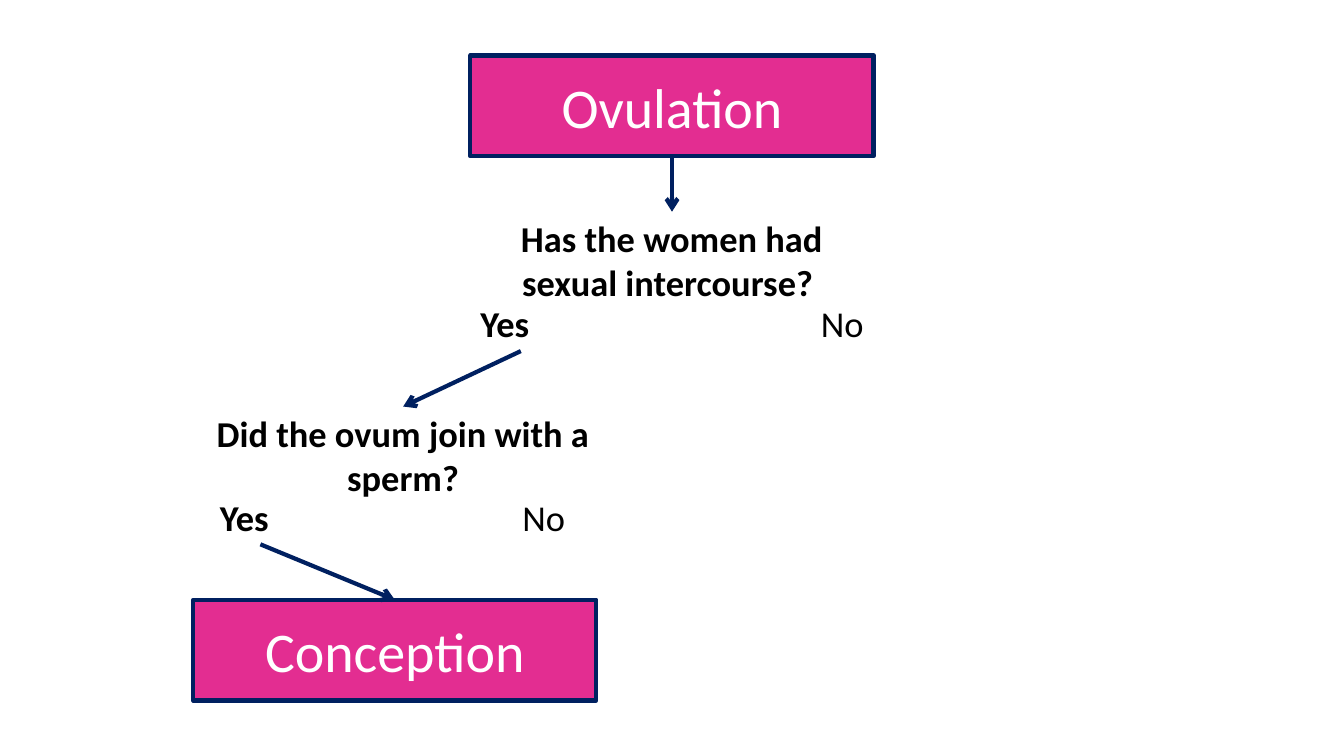
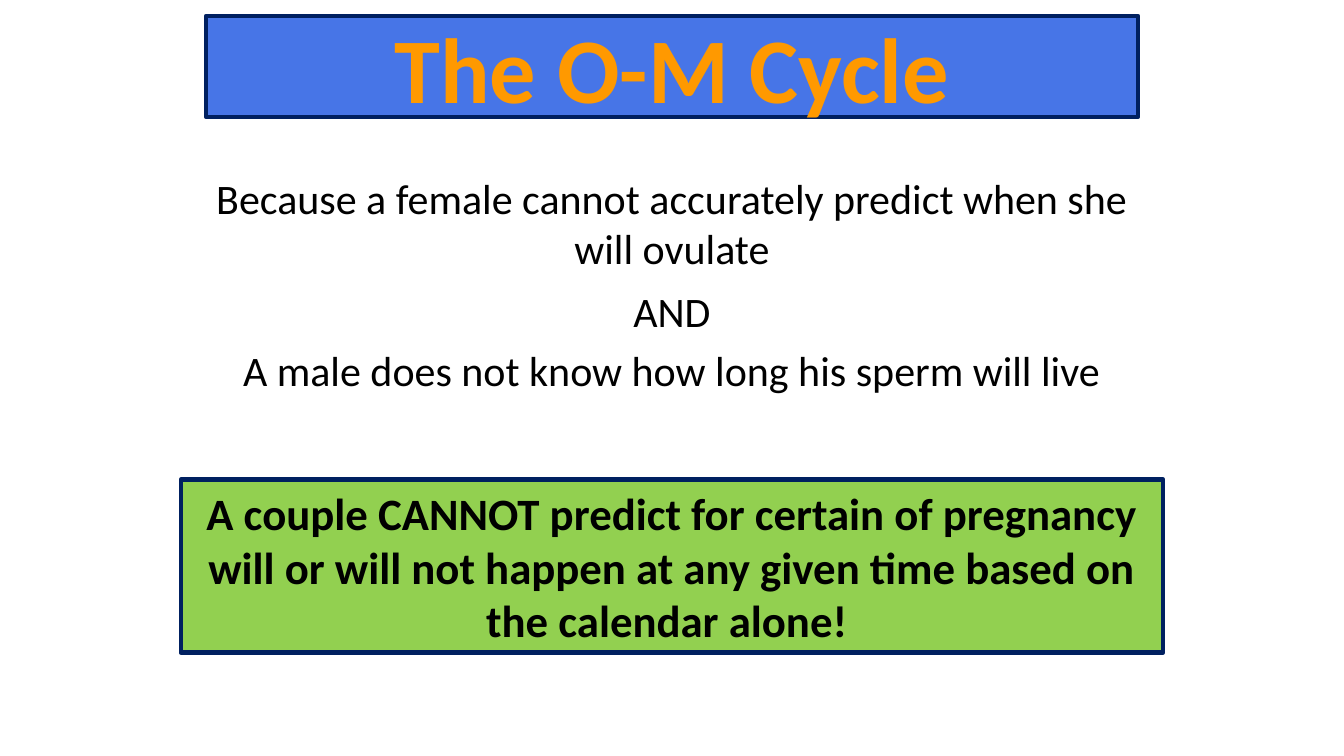
"""Build two slides on ovulation, conception and the O-M cycle."""
from lxml.etree import SubElement
from pptx import Presentation
from pptx.dml.color import RGBColor
from pptx.enum.shapes import MSO_CONNECTOR as Connector, MSO_SHAPE as Preset
from pptx.enum.text import MSO_ANCHOR as Anchor, PP_ALIGN as Align
from pptx.oxml.ns import qn
from pptx.util import Inches, Pt

COLORS = {
    "navy": "002060",
    "pink": "E32D91",
    "blue": "4775E7",
    "green": "92D050",
    "orange": "FF9900",
    "white": "FFFFFF",
    "black": "000000",
}
FONT = "Calibri"
LINE_WIDTH = Pt(3)
COLUMNS, ROWS = 160, 90

presentation = Presentation()
presentation.slide_width = Inches(13.33)
presentation.slide_height = Inches(7.5)
column = presentation.slide_width / COLUMNS
row = presentation.slide_height / ROWS
blank = presentation.slide_layouts[6]


def add_label(slide, text, place, size, color="black", bold=False, align=Align.CENTER, fill=None):
    """Add text at (left, top, width, height) in grid units, in an outlined box if filled."""
    left, top, width, height = place
    frame = [round(length) for length in (left * column, top * row, width * column, height * row)]
    if fill:
        shape = slide.shapes.add_shape(Preset.RECTANGLE, *frame)
        shape.shadow.inherit = False
        shape.fill.solid()
        shape.fill.fore_color.rgb = RGBColor.from_string(COLORS[fill])
        shape.line.color.rgb = RGBColor.from_string(COLORS["navy"])
        shape.line.width = LINE_WIDTH
    else:
        shape = slide.shapes.add_textbox(*frame)
    shape.text_frame.word_wrap = True
    shape.text_frame.vertical_anchor = Anchor.MIDDLE if fill else Anchor.TOP
    paragraph = shape.text_frame.paragraphs[0]
    paragraph.alignment = align
    run = paragraph.add_run()
    run.text = text
    run.font.name = FONT
    run.font.size = Pt(size)
    run.font.bold = bold
    run.font.color.rgb = RGBColor.from_string(COLORS[color])
    return shape


flow = presentation.slides.add_slide(blank)
ovulation, conception = [
    add_label(flow, text, (left, top, 48, 12), 40, "white", fill="pink")
    for text, left, top in (("Ovulation", 56, 6.6), ("Conception", 23, 71.4))
]
intercourse, joining = [
    add_label(flow, text, (left, top, 48, 11.8), 26, bold=True)
    for text, left, top in (
        ("Has the women had sexual intercourse? ", 56, 25.2),
        ("Did the ovum join with a sperm?", 24, 48.4),
    )
]
yes_answers = []
for left, top, no_align in ((56, 35.3, Align.RIGHT), (25, 58.3, Align.LEFT)):
    yes_answers.append(add_label(flow, "Yes", (left, top, 12, 6.5), 26, bold=True, align=Align.LEFT))
    add_label(flow, "No", (left + 36, top, 12, 6.5), 26, align=no_align)

BOTTOM, TOP = 2, 0
for start, end in (
    (ovulation, intercourse),
    (yes_answers[0], joining),
    (yes_answers[1], conception),
):
    arrow = flow.shapes.add_connector(Connector.STRAIGHT, 0, 0, 0, 0)
    arrow.begin_connect(start, BOTTOM)
    arrow.end_connect(end, TOP)
    arrow.line.color.rgb = RGBColor.from_string(COLORS["navy"])
    arrow.line.width = LINE_WIDTH
    properties = arrow.element.spPr
    SubElement(properties.find(qn("a:ln")), qn("a:tailEnd"), type="arrow")
    SubElement(properties, qn("a:effectLst"))

cycle = presentation.slides.add_slide(blank)
add_label(cycle, "The O-M Cycle", (24.5, 1.9, 111, 12), 66, "orange", bold=True, fill="blue")
for text, top, height in (
    ("Because a female cannot accurately predict when she will ovulate", 19.9, 13.3),
    ("AND", 33.4, 7.3),
    ("A male does not know how long his sperm will live", 40.4, 7.3),
):
    add_label(cycle, text, (21.5, top, 117, height), 30)
add_label(
    cycle,
    "A couple CANNOT predict for certain of pregnancy will or will not happen "
    "at any given time based on the calendar alone! ",
    (21.5, 57.1, 117, 20.6), 32, bold=True, fill="green",
)

presentation.save("out.pptx")
